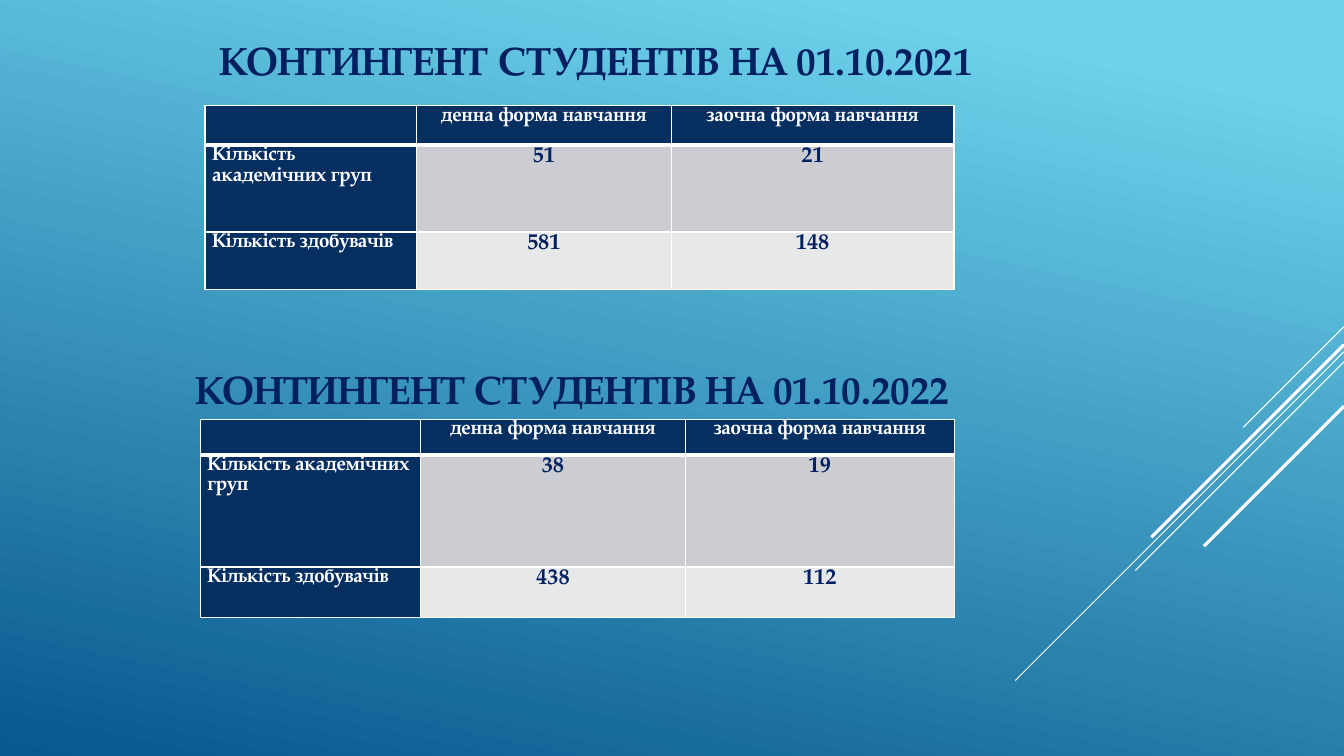
from itertools import product

from lxml import etree
from pptx import Presentation
from pptx.dml.color import RGBColor
from pptx.enum.shapes import MSO_CONNECTOR
from pptx.enum.text import MSO_ANCHOR, MSO_AUTO_SIZE, PP_ALIGN
from pptx.oxml.ns import qn
from pptx.util import Pt

STRAIGHT = MSO_CONNECTOR.STRAIGHT
TOP = MSO_ANCHOR.TOP
NO_FIT = MSO_AUTO_SIZE.NONE
LEFT, CENTER = PP_ALIGN.LEFT, PP_ALIGN.CENTER

FONT = "TeX Gyre Pagella"
NAVY, INK, WHITE = "052F61", "002060", "FFFFFF"
ROW_FILLS = (NAVY, "CCCDD2", "E7E8EA")
SLIDE_WIDTH, SLIDE_HEIGHT = 960, 540

STREAKS = (
    (233.28, 72, 0.75),
    (251.28, 234.72, 0.75),
    (258.48, 149.04, 0.75),
    (246.24, 137.52, 2.25),
    (290.16, 100.08, 2.25),
)

HEADER = ("", "денна форма навчання", "заочна форма навчання")
GROUPS = "Кількість академічних груп"
STUDENTS = "Кількість здобувачів"


def color(value):
    """Turn a hex string into a colour."""
    return RGBColor.from_string(value)


def write(frame, text, size=14, ink=WHITE, align=CENTER):
    """Write one bold paragraph into a text frame."""
    paragraph = frame.paragraphs[0]
    paragraph.alignment = align
    paragraph.line_spacing = 1.07
    paragraph.space_after = Pt(8)
    run = paragraph.add_run()
    run.text = text
    run.font.name = FONT
    run.font.size = Pt(size)
    run.font.bold = True
    run.font.color.rgb = color(ink)


def paint_background(slide):
    """Fill the slide with the blue gradient."""
    fill = slide.background.fill
    fill.gradient()
    fill.gradient_angle = 258
    for stop, (position, shade) in zip(
        fill.gradient_stops, ((0.1, "6ED2EB"), (1, "06588E"))
    ):
        stop.position = position
        stop.color.rgb = color(shade)


def draw_streaks(slide, right):
    """Draw the diagonal lines that run down from the right edge."""
    for top, reach, weight in STREAKS:
        streak = slide.shapes.add_connector(
            STRAIGHT, Pt(right), Pt(top), Pt(right - reach), Pt(top + reach)
        )
        streak.line.color.rgb = color(WHITE)
        streak.line.width = Pt(weight)
        etree.SubElement(streak._element.spPr, qn("a:effectLst"))


def place_heading(heading, text, left, top, width, height):
    """Place a heading shape in its box and write its text."""
    heading.left, heading.top = Pt(left), Pt(top)
    heading.width, heading.height = Pt(width), Pt(height)
    frame = heading.text_frame
    frame.word_wrap = True
    frame.auto_size = NO_FIT
    frame.vertical_anchor = TOP
    write(frame, text, size=28, ink=INK)


def outline_cell(cell, row):
    """Give a cell white borders, thick between header and body."""
    properties = cell._tc.get_or_add_tcPr()
    weights = {"L": 1, "R": 1, "T": 3 if row == 1 else 1, "B": 3 if row == 0 else 1}
    for side, weight in weights.items():
        border = etree.SubElement(properties, qn(f"a:ln{side}"), w=str(Pt(weight)))
        fill = etree.SubElement(border, qn("a:solidFill"))
        etree.SubElement(fill, qn("a:srgbClr"), val=WHITE)


def add_enrolment_table(slide, counts, left, top, widths, heights):
    """Add a table of groups and students by form of study."""
    group_counts, student_counts = counts
    content = (HEADER, (GROUPS, *group_counts), (STUDENTS, *student_counts))
    table = slide.shapes.add_table(
        len(heights), len(widths), Pt(left), Pt(top), Pt(sum(widths)), Pt(sum(heights))
    ).table
    for column, width in zip(table.columns, widths):
        column.width = Pt(width)
    for table_row, height in zip(table.rows, heights):
        table_row.height = Pt(height)
    for row, column in product(range(len(heights)), range(len(widths))):
        cell = table.cell(row, column)
        cell.margin_left = cell.margin_right = Pt(5)
        cell.margin_top = cell.margin_bottom = Pt(0)
        outline_cell(cell, row)
        cell.fill.solid()
        cell.fill.fore_color.rgb = color(ROW_FILLS[row] if column else NAVY)
        text = content[row][column]
        if row and column:
            write(cell.text_frame, text, size=16, ink=INK)
        elif text:
            write(cell.text_frame, text, align=LEFT if row else CENTER)


def build_enrolment_slide(presentation):
    """Build the slide comparing enrolment in two years."""
    slide = presentation.slides.add_slide(presentation.slide_layouts[5])
    paint_background(slide)
    draw_streaks(slide, SLIDE_WIDTH)
    place_heading(
        slide.shapes.title, "КОНТИНГЕНТ СТУДЕНТІВ НА 01.10.2021", 98.6, 20.2, 654.5, 86.4
    )
    add_enrolment_table(
        slide, (("51", "21"), ("581", "148")),
        146.5, 75.5, (151, 182, 202), (28.2, 62, 41.2),
    )
    heading_2022 = slide.shapes.add_textbox(0, 0, 0, 0)
    place_heading(
        heading_2022, "КОНТИНГЕНТ СТУДЕНТІВ НА 01.10.2022", 54.7, 254.9, 708.5, 86.4
    )
    add_enrolment_table(
        slide, (("38", "19"), ("438", "112")),
        143.2, 299.5, (157.2, 189.2, 192), (25.5, 80, 36.2),
    )


def main():
    """Create and save the presentation."""
    presentation = Presentation()
    presentation.slide_width = Pt(SLIDE_WIDTH)
    presentation.slide_height = Pt(SLIDE_HEIGHT)
    build_enrolment_slide(presentation)
    presentation.save("out.pptx")


if __name__ == "__main__":
    main()
